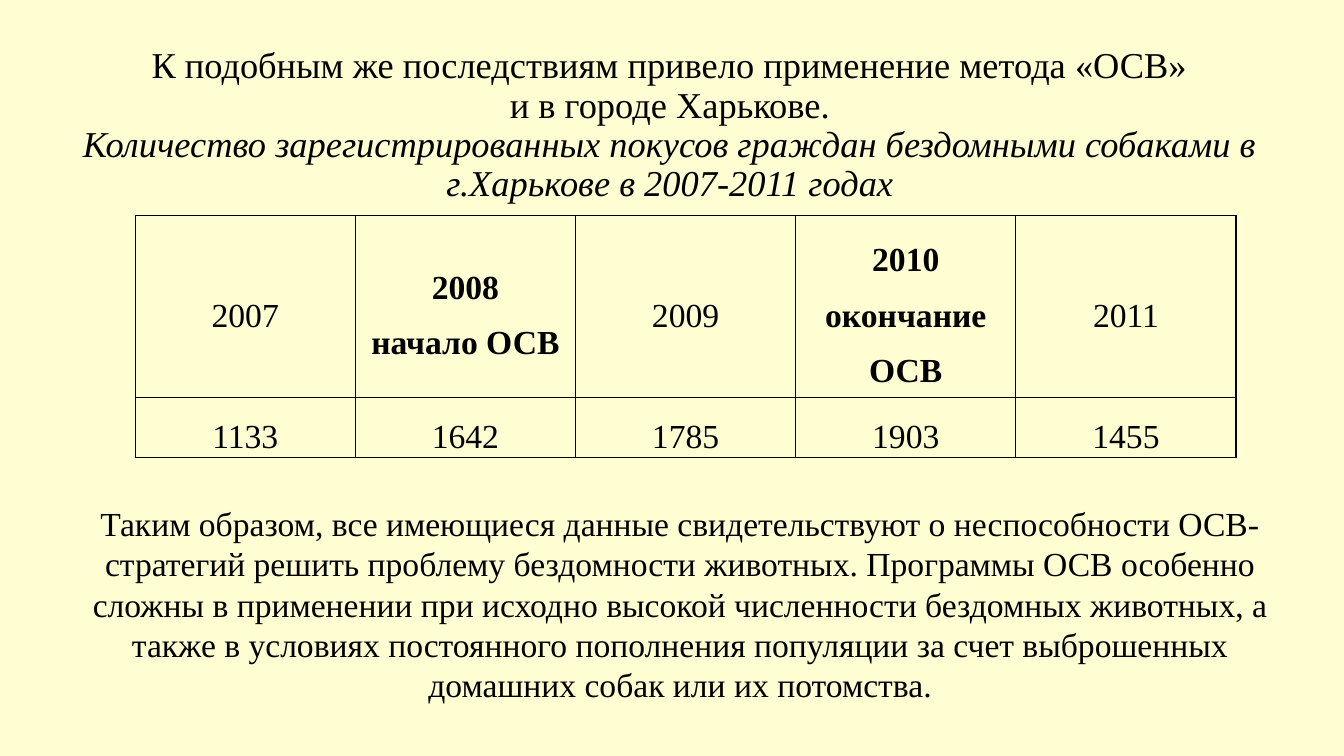
from lxml import etree
from pptx import Presentation
from pptx.dml.color import RGBColor
from pptx.enum.text import MSO_ANCHOR, PP_ALIGN
from pptx.oxml.ns import qn
from pptx.util import Inches, Pt

CENTER = PP_ALIGN.CENTER
MIDDLE, BOTTOM, TOP = MSO_ANCHOR.MIDDLE, MSO_ANCHOR.BOTTOM, MSO_ANCHOR.TOP
FONT = "Times New Roman"
INK, PAPER = "000000", "FFFDD2"

HEADING = [
    ("К подобным же последствиям привело применение метода «ОСВ»", False),
    ("и в городе Харькове.", False),
    ("Количество зарегистрированных покусов граждан бездомными собаками "
     "в г.Харькове в 2007-2011 годах", True),
]
# Each cell is a list of paragraphs
YEARS = [["2007"], ["2008", "начало ОСВ"], ["2009"],
         ["2010", "окончание ОСВ"], ["2011"]]
BITES = [["1133"], ["1642"], ["1785"], ["1903"], ["1455"]]
CONCLUSION = (
    "Таким образом, все имеющиеся данные свидетельствуют о неспособности "
    "ОСВ-стратегий решить проблему бездомности животных. Программы ОСВ "
    "особенно сложны в применении при исходно высокой численности бездомных "
    "животных, а также в условиях постоянного пополнения популяции за счет "
    "выброшенных домашних собак или их потомства."
)


def color(hex_code):
    return RGBColor.from_string(hex_code)


def add_run(paragraph, text, size, bold=False, italic=False):
    run = paragraph.add_run()
    run.text = text
    run.font.name, run.font.size = FONT, Pt(size)
    run.font.bold, run.font.italic = bold, italic
    run.font.color.rgb = color(INK)


def add_centered_box(slide, box, anchor, line_spacing):
    frame = slide.shapes.add_textbox(*map(Inches, box)).text_frame
    frame.word_wrap = True
    frame.vertical_anchor = anchor
    paragraph = frame.paragraphs[0]
    paragraph.alignment = CENTER
    paragraph.line_spacing = line_spacing
    return paragraph


def add_heading(slide, box):
    heading = add_centered_box(slide, box, BOTTOM, 0.9)
    for index, (line, italic) in enumerate(HEADING):
        if index:
            heading.add_line_break()
        add_run(heading, line, 26, italic=italic)


def add_borders(cell):
    properties = cell._tc.get_or_add_tcPr()
    for position, side in enumerate(("a:lnL", "a:lnR", "a:lnT", "a:lnB")):
        line = etree.Element(qn(side), w=str(Pt(1)))
        fill = etree.SubElement(line, qn("a:solidFill"))
        etree.SubElement(fill, qn("a:srgbClr"), val=INK)
        properties.insert(position, line)


def fill_cell(cell, lines):
    cell.fill.background()
    cell.vertical_anchor = MIDDLE
    cell.margin_left = cell.margin_right = 0
    cell.margin_top = cell.margin_bottom = 0
    frame = cell.text_frame
    for index, line in enumerate(lines):
        paragraph = frame.add_paragraph() if index else frame.paragraphs[0]
        paragraph.alignment = CENTER
        paragraph.line_spacing = 1.5
        add_run(paragraph, line, 24, bold=len(lines) > 1)
    add_borders(cell)


def add_bites_table(slide, box, row_heights):
    rows = [YEARS, BITES]
    table = slide.shapes.add_table(
        len(rows), len(YEARS), *map(Inches, box)).table
    table.first_row = table.horz_banding = False
    for column in table.columns:
        column.width = Inches(box[2] / len(YEARS))
    for r, (cells, height) in enumerate(zip(rows, row_heights)):
        table.rows[r].height = Inches(height)
        for c, lines in enumerate(cells):
            fill_cell(table.cell(r, c), lines)


def add_conclusion(slide, box):
    conclusion = add_centered_box(slide, box, TOP, 1.0)
    add_run(conclusion, CONCLUSION, 24)


def main():
    deck = Presentation()
    deck.slide_width, deck.slide_height = Inches(13.33), Inches(7.5)
    slide = deck.slides.add_slide(deck.slide_layouts[6])
    background = slide.background.fill
    background.solid()
    background.fore_color.rgb = color(PAPER)

    add_heading(slide, (0.5, 0.34, 12.29, 1.74))
    add_bites_table(slide, (1.34, 2.14, 10.92, 2.33), (1.76, 0.57))
    add_conclusion(slide, (0.5, 4.94, 12.49, 2.12))
    deck.save("out.pptx")


if __name__ == "__main__":
    main()
